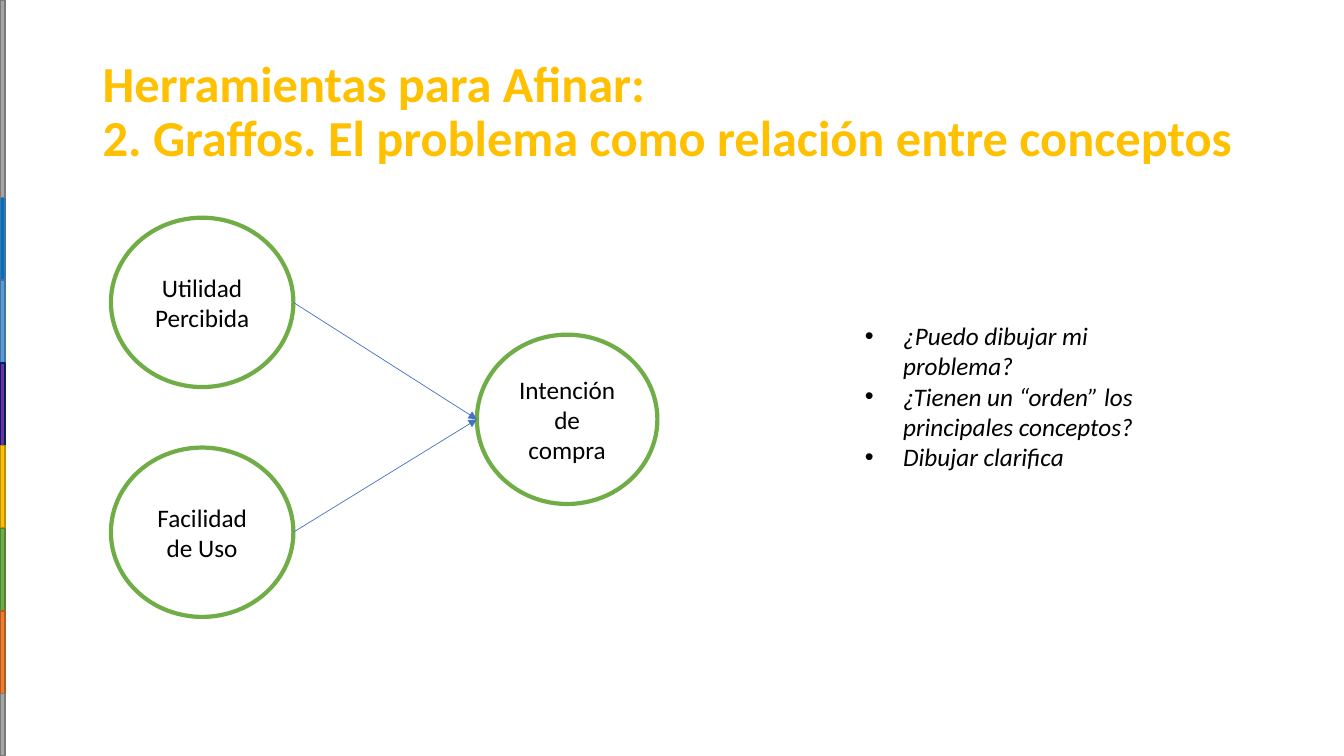
import pptx
import pptx.util
import pptx.dml.color
import pptx.enum.shapes
import pptx.enum.text
import pptx.oxml.ns
from lxml import etree

Inches = pptx.util.Inches
Pt = pptx.util.Pt
RGBColor = pptx.dml.color.RGBColor
MSO_SHAPE = pptx.enum.shapes.MSO_SHAPE
MSO_ANCHOR = pptx.enum.text.MSO_ANCHOR
PP_ALIGN = pptx.enum.text.PP_ALIGN
qn = pptx.oxml.ns.qn

FONT = "Calibri"
WHITE = RGBColor(0xFF, 0xFF, 0xFF)
BLACK = RGBColor(0x00, 0x00, 0x00)
GOLD = RGBColor(0xFF, 0xC0, 0x00)
DARK_GOLD = RGBColor(0xBD, 0x8E, 0x00)
GREEN = RGBColor(0x70, 0xAD, 0x47)
DARK_GREEN = RGBColor(0x53, 0x80, 0x35)
ARROW_BLUE = RGBColor(0x44, 0x72, 0xC4)
BLUE = RGBColor(0x00, 0x70, 0xC0)
LIGHT_BLUE = RGBColor(0x5B, 0x9B, 0xD5)
DARK_BLUE = RGBColor(0x43, 0x73, 0x9E)
PURPLE = RGBColor(0x70, 0x30, 0xA0)
NAVY = RGBColor(0x00, 0x20, 0x60)
ORANGE = RGBColor(0xED, 0x7D, 0x31)
DARK_ORANGE = RGBColor(0xAF, 0x5C, 0x24)
GRAY = RGBColor(0xA5, 0xA5, 0xA5)
DARK_GRAY = RGBColor(0x7A, 0x7A, 0x7A)

NODE_HEIGHT = 1.68
BAND_WIDTH = 0.05
BAND_STEP = 0.82
BANDS_TOP = 1.96
BANDS = [
    (BLUE, DARK_BLUE),
    (LIGHT_BLUE, DARK_BLUE),
    (PURPLE, NAVY),
    (GOLD, DARK_GOLD),
    (GREEN, DARK_GREEN),
    (ORANGE, DARK_ORANGE),
]
QUESTIONS = [
    "¿Puedo dibujar mi problema?",
    "¿Tienen un “orden” los principales conceptos?",
    "Dibujar clarifica",
]


def add_span(para, text, size, color, bold=False, italic=False):
    span = para.add_run()
    span.text = text
    span.font.name = FONT
    span.font.size = Pt(size)
    span.font.color.rgb = color
    span.font.bold = bold
    span.font.italic = italic


def add_outlined(page, kind, left, top, width, height, fill, line, weight):
    shape = page.shapes.add_shape(
        kind, Inches(left), Inches(top), Inches(width), Inches(height))
    shape.shadow.inherit = False
    shape.fill.solid()
    shape.fill.fore_color.rgb = fill
    shape.line.color.rgb = line
    shape.line.width = Pt(weight)
    return shape


def add_text_box(page, left, top, width, height):
    box = page.shapes.add_textbox(
        Inches(left), Inches(top), Inches(width), Inches(height))
    box.text_frame.word_wrap = True
    return box.text_frame


def add_title(page, lines):
    frame = add_text_box(page, 0.92, 0.4, 11.5, 1.45)
    frame.vertical_anchor = MSO_ANCHOR.MIDDLE
    para = frame.paragraphs[0]
    para.line_spacing = 0.9
    for index, line in enumerate(lines):
        if index:
            para.add_line_break()
        add_span(para, line, 36, GOLD, bold=True)


def add_concept(page, text, left, top, width):
    node = add_outlined(page, MSO_SHAPE.OVAL, left, top, width, NODE_HEIGHT,
                        WHITE, GREEN, 3)
    node.text_frame.word_wrap = True
    node.text_frame.vertical_anchor = MSO_ANCHOR.MIDDLE
    para = node.text_frame.paragraphs[0]
    para.alignment = PP_ALIGN.CENTER
    add_span(para, text, 18, BLACK)
    return node


def add_arrow(page, source, target):
    arrow = page.shapes.add_connector(
        pptx.enum.shapes.MSO_CONNECTOR.STRAIGHT,
        source.left + source.width, source.top + source.height // 2,
        target.left, target.top + target.height // 2)
    arrow.line.color.rgb = ARROW_BLUE
    arrow.line.width = Pt(0.5)
    etree.SubElement(arrow.line._get_or_add_ln(), qn("a:tailEnd"), type="triangle")
    etree.SubElement(arrow._element.spPr, qn("a:effectLst"))


def add_band(page, top, height, fill, line):
    add_outlined(page, MSO_SHAPE.RECTANGLE, 0, top, BAND_WIDTH, height, fill, line, 1)


def add_side_bands(page):
    for index, (fill, line) in enumerate(BANDS):
        add_band(page, BANDS_TOP + index * BAND_STEP, BAND_STEP, fill, line)
    bottom = BANDS_TOP + len(BANDS) * BAND_STEP
    add_band(page, 0, BANDS_TOP, GRAY, DARK_GRAY)
    add_band(page, bottom, 7.5 - bottom, GRAY, DARK_GRAY)


def add_bullets(page, items):
    frame = add_text_box(page, 8.48, 3.13, 3.43, 1.62)
    for index, item in enumerate(items):
        para = frame.add_paragraph() if index else frame.paragraphs[0]
        properties = para._p.get_or_add_pPr()
        properties.set("marL", str(Inches(0.38)))
        properties.set("indent", str(-Inches(0.38)))
        etree.SubElement(properties, qn("a:buFont"), typeface="Arial")
        etree.SubElement(properties, qn("a:buChar"), char="•")
        add_span(para, item, 18, BLACK, italic=True)


def main():
    deck = pptx.Presentation()
    deck.slide_width = Inches(13.33)
    deck.slide_height = Inches(7.5)
    page = deck.slides.add_slide(deck.slide_layouts[6])
    add_title(page, ["Herramientas para Afinar:",
                     "2. Graffos. El problema como relación entre conceptos"])
    usefulness = add_concept(page, "Utilidad Percibida", 1.1, 2.16, 1.81)
    ease = add_concept(page, "Facilidad de Uso", 1.1, 4.44, 1.81)
    intention = add_concept(page, "Intención de compra", 4.73, 3.32, 1.79)
    for source in (usefulness, ease):
        add_arrow(page, source, intention)
    add_side_bands(page)
    add_bullets(page, QUESTIONS)
    deck.save("out.pptx")


if __name__ == "__main__":
    main()
